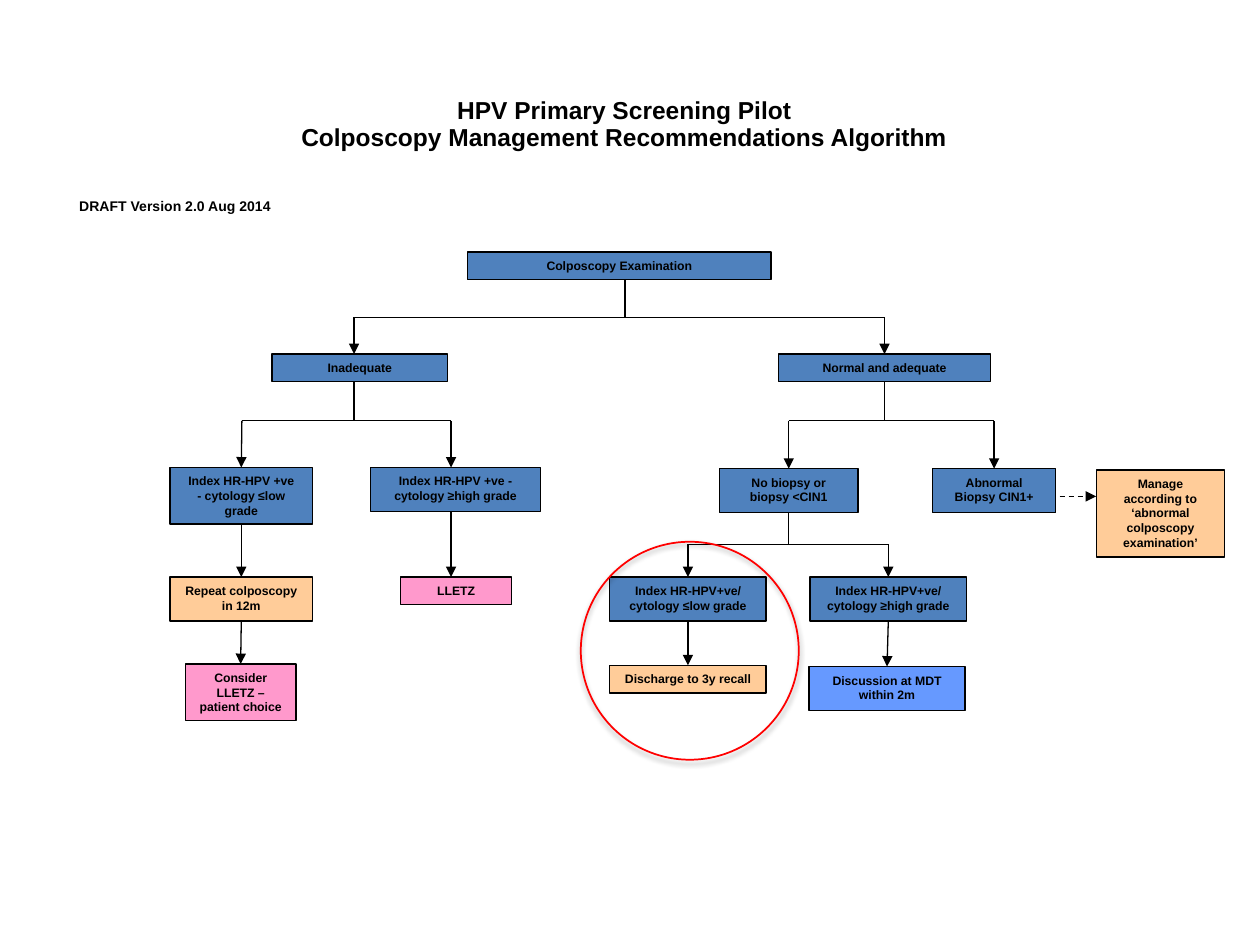
from pptx import Presentation
from pptx.dml.color import RGBColor
from pptx.enum.dml import MSO_LINE
from pptx.enum.shapes import MSO_CONNECTOR, MSO_SHAPE
from pptx.enum.text import MSO_ANCHOR, MSO_AUTO_SIZE, PP_ALIGN
from pptx.oxml import parse_xml
from pptx.oxml.ns import nsdecls, qn
from pptx.util import Inches, Pt

RECTANGLE, OVAL = MSO_SHAPE.RECTANGLE, MSO_SHAPE.OVAL
STRAIGHT, DASH = MSO_CONNECTOR.STRAIGHT, MSO_LINE.DASH
LEFT, CENTER = PP_ALIGN.LEFT, PP_ALIGN.CENTER
TOP, NO_FIT = MSO_ANCHOR.TOP, MSO_AUTO_SIZE.NONE
TOP_SIDE, BOTTOM_SIDE = 0, 2

BLACK = RGBColor(0x00, 0x00, 0x00)
RED = RGBColor(0xFF, 0x00, 0x00)
BLUE = RGBColor(0x4F, 0x81, 0xBD)
BRIGHT_BLUE = RGBColor(0x66, 0x99, 0xFF)
PEACH = RGBColor(0xFF, 0xCC, 0x99)
PINK = RGBColor(0xFF, 0x99, 0xCC)

JOIN_TOLERANCE = Inches(0.02)


class FlowChart:
    font = "Arial"
    line_width = Pt(0.75)

    def __init__(self, slide):
        self.slide = slide
        self.shapes = slide.shapes

    def place(self, shape, left, top, width, height):
        shape.left, shape.top = Inches(left), Inches(top)
        shape.width, shape.height = Inches(width), Inches(height)

    def add_text(self, shape, lines, size, align):
        frame = shape.text_frame
        frame.word_wrap = True
        frame.auto_size = NO_FIT
        frame.vertical_anchor = TOP
        for index, line in enumerate(lines):
            para = frame.add_paragraph() if index else frame.paragraphs[0]
            para.alignment = align
            para.space_before = Pt(size / 2)
            for part, words in enumerate(line.split("\n")):
                if part:
                    para.add_line_break()
                span = para.add_run()
                span.text = words
                span.font.name = self.font
                span.font.size = Pt(size)
                span.font.bold = True
                span.font.color.rgb = BLACK
        return frame

    def title(self, lines, left, top, width, height):
        shape = self.shapes.title
        self.place(shape, left, top, width, height)
        frame = self.add_text(shape, lines, 14, CENTER)
        for para in frame.paragraphs:
            para.line_spacing = Pt(8)

    def note(self, words, left, top, width, height):
        shape = self.shapes.add_textbox(*map(Inches, (left, top, width, height)))
        self.add_text(shape, [words], 8, LEFT)

    def box(self, words, left, top, width, height, fill=BLUE):
        shape = self.shapes.add_shape(
            RECTANGLE, *map(Inches, (left, top, width, height)))
        shape.shadow.inherit = False
        shape.fill.solid()
        shape.fill.fore_color.rgb = fill
        shape.line.color.rgb = BLACK
        shape.line.width = self.line_width
        self.add_text(shape, [words], 7, CENTER)
        return shape

    def line(self, start, end, arrow=False, dash=None):
        link = self.shapes.add_connector(STRAIGHT, *start, *end)
        link.line.color.rgb = BLACK
        link.line.width = self.line_width
        if dash:
            link.line.dash_style = dash
        properties = link._element.spPr
        if arrow:
            properties.find(qn("a:ln")).append(
                parse_xml(f'<a:tailEnd {nsdecls("a")} type="triangle"/>'))
        properties.append(parse_xml(f'<a:effectLst {nsdecls("a")}/>'))
        return link

    def is_middle(self, box, x):
        return abs(box.left + box.width // 2 - x) <= JOIN_TOLERANCE

    def drop(self, x, child, parent=None, top=None):
        """Arrow down to a box, from its parent box or from a given height."""
        x = Inches(x)
        start = parent.top + parent.height if parent else top
        link = self.line((x, start), (x, child.top), arrow=True)
        if parent and self.is_middle(parent, x):
            link.begin_connect(parent, BOTTOM_SIDE)
        if self.is_middle(child, x):
            link.end_connect(child, TOP_SIDE)

    def fork(self, parent, x, bar, branches):
        """Stem, crossbar and one arrow for each (x, child) branch."""
        x, bar = Inches(x), Inches(bar)
        stem = self.line((x, parent.top + parent.height), (x, bar))
        if self.is_middle(parent, x):
            stem.begin_connect(parent, BOTTOM_SIDE)
        ends = [Inches(branch_x) for branch_x, _ in branches]
        self.line((ends[0], bar), (ends[-1], bar))
        for branch_x, child in branches:
            self.drop(branch_x, child, top=bar)

    def ring(self, left, top, size):
        shape = self.shapes.add_shape(
            OVAL, *map(Inches, (left, top, size, size)))
        shape.fill.background()
        shape.line.color.rgb = RED
        shape.line.width = Pt(1)
        shape.shadow.inherit = False
        shape._element.spPr.find(qn("a:effectLst")).append(parse_xml(
            f'<a:outerShdw {nsdecls("a")} blurRad="{Pt(3.1)}" dist="{Pt(1.8)}" '
            'dir="5400000" rotWithShape="0"><a:srgbClr val="000000">'
            '<a:alpha val="35000"/></a:srgbClr></a:outerShdw>'))


def main():
    deck = Presentation()
    deck.slide_width, deck.slide_height = Inches(10), Inches(7.5)
    page = deck.slides.add_slide(deck.slide_layouts[5])
    chart = FlowChart(page)

    # Heading
    chart.title(["HPV Primary Screening Pilot",
                 "Colposcopy Management Recommendations Algorithm"],
                1.57, 0.83, 6.77, 0.46)
    chart.note("DRAFT Version 2.0 Aug 2014", 0.53, 1.52, 1.82, 0.25)

    # Examination and its two outcomes
    examination = chart.box("Colposcopy Examination", 3.71, 2, 2.41, 0.22)
    inadequate = chart.box("Inadequate", 2.16, 2.81, 1.39, 0.22)
    adequate = chart.box("Normal and adequate", 6.18, 2.81, 1.68, 0.22)

    # Inadequate branch
    low = chart.box("Index HR-HPV +ve\n- cytology ≤low grade",
                    1.35, 3.71, 1.13, 0.45)
    high = chart.box("Index HR-HPV +ve - cytology ≥high grade",
                     2.94, 3.71, 1.35, 0.35)
    repeat = chart.box("Repeat colposcopy in 12m",
                       1.35, 4.58, 1.13, 0.35, PEACH)
    consider = chart.box("Consider LLETZ – patient choice",
                         1.47, 5.27, 0.88, 0.45, PINK)
    lletz = chart.box("LLETZ", 3.18, 4.58, 0.88, 0.22, PINK)

    # Normal and adequate branch
    no_biopsy = chart.box("No biopsy or biopsy <CIN1", 5.71, 3.72, 1.1, 0.35)
    abnormal = chart.box("Abnormal Biopsy CIN1+", 7.4, 3.72, 0.98, 0.35)
    chart.box("Manage according to ‘abnormal colposcopy examination’",
              8.7, 3.73, 1.02, 0.69, PEACH)
    index_low = chart.box("Index HR-HPV+ve/ cytology ≤low grade",
                          4.84, 4.58, 1.24, 0.35)
    index_high = chart.box("Index HR-HPV+ve/ cytology ≥high grade",
                           6.43, 4.58, 1.24, 0.35)
    discharge = chart.box("Discharge to 3y recall",
                          4.84, 5.28, 1.24, 0.22, PEACH)
    discussion = chart.box("Discussion at MDT within 2m",
                           6.42, 5.29, 1.24, 0.35, BRIGHT_BLUE)

    # Forks
    chart.fork(examination, 4.96, 2.52, [(2.81, inadequate), (7.02, adequate)])
    chart.fork(inadequate, 2.81, 3.34, [(1.92, low), (3.58, high)])
    chart.fork(adequate, 7.02, 3.34, [(6.26, no_biopsy), (7.89, abnormal)])
    chart.fork(no_biopsy, 6.26, 4.32, [(5.46, index_low), (7.05, index_high)])

    # Single steps
    for x, parent, child in [(1.92, low, repeat), (1.92, repeat, consider),
                             (3.58, high, lletz),
                             (5.46, index_low, discharge),
                             (7.05, index_high, discussion)]:
        chart.drop(x, child, parent)
    chart.line((Inches(8.41), Inches(3.94)), (Inches(8.7), Inches(3.94)),
               arrow=True, dash=DASH)

    # Highlighted pathway
    chart.ring(4.61, 4.3, 1.73)

    deck.save("out.pptx")


if __name__ == "__main__":
    main()
